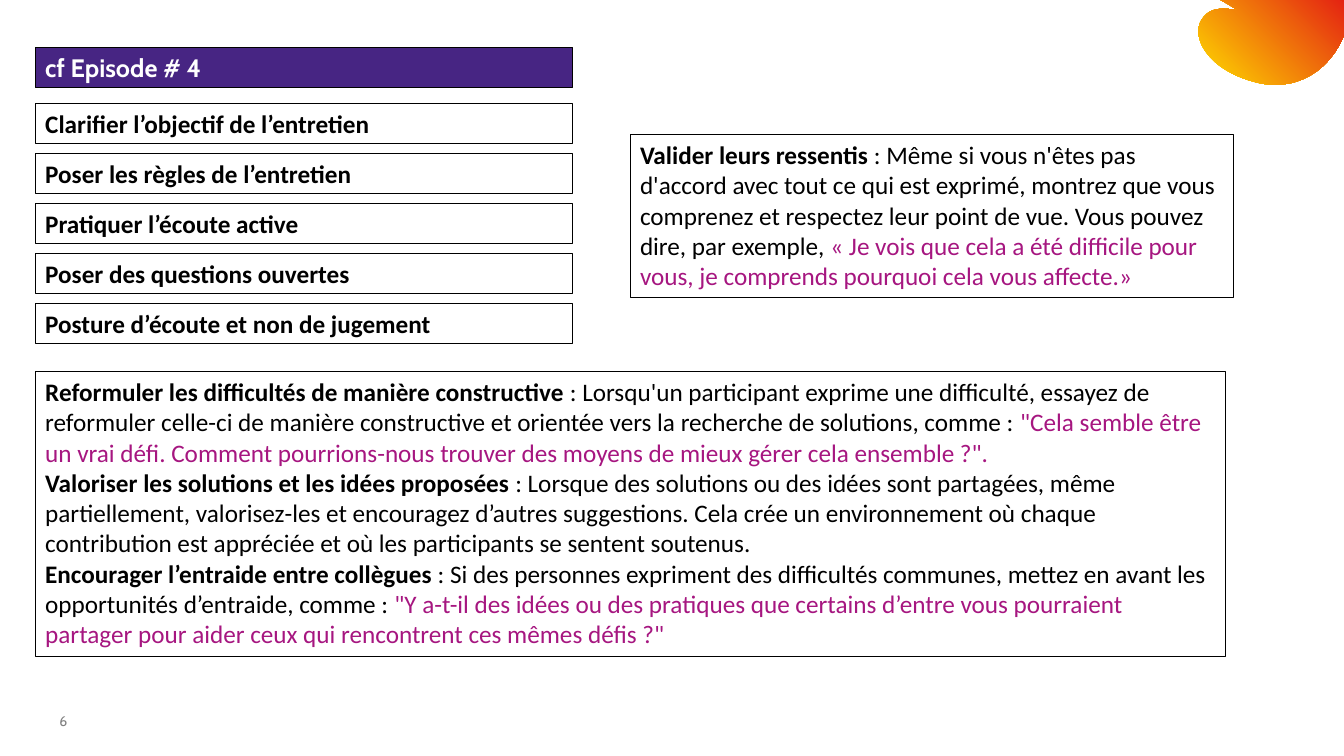
from dataclasses import dataclass

from pptx import Presentation
from pptx.dml.color import RGBColor
from pptx.enum.shapes import MSO_SHAPE
from pptx.enum.text import MSO_ANCHOR, MSO_AUTO_SIZE, PP_ALIGN
from pptx.slide import Slide
from pptx.text.text import TextFrame
from pptx.util import Cm, Pt


@dataclass(frozen=True)
class Theme:
    black: RGBColor = RGBColor(0x00, 0x00, 0x00)
    white: RGBColor = RGBColor(0xFF, 0xFF, 0xFF)
    purple: RGBColor = RGBColor(0x47, 0x25, 0x83)
    magenta: RGBColor = RGBColor(0xA6, 0x16, 0x80)
    grey: RGBColor = RGBColor(0x80, 0x80, 0x80)
    yellow: RGBColor = RGBColor(0xFF, 0xDD, 0x00)
    red: RGBColor = RGBColor(0xE4, 0x23, 0x12)
    body_font: str = "Calibri"
    brand_font: str = "Cabin"
    body_size: Pt = Pt(18)
    number_size: Pt = Pt(10)
    border: Pt = Pt(0.75)


THEME = Theme()


@dataclass(frozen=True)
class Run:
    text: str
    bold: bool = False
    color: RGBColor = THEME.black
    font: str = THEME.body_font
    size: Pt = THEME.body_size


@dataclass(frozen=True)
class Box:
    """A bordered text panel, with its place in centimetres."""
    left: float
    top: float
    width: float
    height: float
    paragraphs: list[list[Run]]
    fill: RGBColor | None = None


Point = tuple[float, float]

LEFT, STEP_WIDTH, STEP_HEIGHT = 0.89, 13.54, 1.02
FIRST_STEP_TOP, STEP_PITCH = 2.6, 1.26

STEPS = [
    "Clarifier l’objectif de l’entretien",
    "Poser les règles de l’entretien",
    "Pratiquer l’écoute active",
    "Poser des questions ouvertes",
    "Posture d’écoute et non de jugement",
]

EPISODE = Box(
    LEFT, 1.19, STEP_WIDTH, STEP_HEIGHT,
    [[Run("cf Episode # 4", True, THEME.white, THEME.brand_font)]],
    THEME.purple,
)

FEELINGS = Box(15.88, 3.39, 15.2, 4.11, [[
    Run("Valider leurs ressentis", True),
    Run(" : Même si vous n'êtes pas d'accord avec tout ce qui est exprimé, "
        "montrez que vous comprenez et respectez leur point de vue. "
        "Vous pouvez dire, par exemple, "),
    Run("« Je vois que cela a été difficile pour vous, "
        "je comprends pourquoi cela vous affecte.»", color=THEME.magenta),
]])

ADVICE = Box(LEFT, 9.36, 30, 7.19, [
    [
        Run("Reformuler les difficultés de manière constructive", True),
        Run(" : Lorsqu'un participant exprime une difficulté, essayez de "
            "reformuler celle-ci de manière constructive et orientée vers "
            "la recherche de solutions, comme : "),
        Run('"Cela semble être un vrai défi. Comment pourrions-nous trouver '
            'des moyens de mieux gérer cela ensemble ?".',
            color=THEME.magenta),
    ],
    [
        Run("Valoriser les solutions et les idées proposées", True),
        Run(" : Lorsque des solutions ou des idées sont partagées, même "
            "partiellement, valorisez-les et encouragez d’autres suggestions. "
            "Cela crée un environnement où chaque contribution est appréciée "
            "et où les participants se sentent soutenus."),
    ],
    [
        Run("Encourager l’entraide entre collègues", True),
        Run(" : Si des personnes expriment des difficultés communes, mettez "
            "en avant les opportunités d’entraide, comme : "),
        Run('"Y a-t-il des idées ou des pratiques que certains d’entre vous '
            'pourraient partager pour aider ceux qui rencontrent ces mêmes '
            'défis ?"', color=THEME.magenta),
    ],
])

PETAL_EDGE: list[Point] = [(30.76, 0), (33.87, 0), (33.87, 0.89), (33.81, 1.02)]
PETAL_CURVES: list[tuple[Point, Point, Point]] = [
    ((33.43, 1.83), (32.59, 2.34), (31.6, 2.06)),
    ((30.35, 1.73), (29.92, 0.79), (30.38, 0.38)),
    ((30.56, 0.2), (30.84, 0.18), (31.29, 0.28)),
    ((31.19, 0.25), (31.09, 0.2), (30.99, 0.13)),
]


def curve_points(start: Point, c1: Point, c2: Point, end: Point,
                 steps: int = 24) -> list[Point]:
    """Sample a cubic Bézier curve, leaving out its start point."""
    points = []
    for i in range(1, steps + 1):
        t = i / steps
        u = 1 - t
        weights = (u ** 3, 3 * u * u * t, 3 * u * t * t, t ** 3)
        ctrl = (start, c1, c2, end)
        points.append((sum(w * x for w, (x, _) in zip(weights, ctrl)),
                       sum(w * y for w, (_, y) in zip(weights, ctrl))))
    return points


def add_petal(slide: Slide) -> None:
    outline = list(PETAL_EDGE)
    for c1, c2, end in PETAL_CURVES:
        outline += curve_points(outline[-1], c1, c2, end)
    first, *rest = [(Cm(x), Cm(y)) for x, y in outline]
    builder = slide.shapes.build_freeform(*first)
    builder.add_line_segments(rest, close=True)
    sp = builder.convert_to_shape()
    sp.shadow.inherit = False
    sp.line.fill.background()
    sp.fill.gradient()
    sp.fill.gradient_angle = 45
    for stop, color in zip(sp.fill.gradient_stops, (THEME.yellow, THEME.red)):
        stop.color.rgb = color


def write_text(tf: TextFrame, paragraphs: list[list[Run]]) -> None:
    for i, runs in enumerate(paragraphs):
        p = tf.add_paragraph() if i else tf.paragraphs[0]
        p.alignment = PP_ALIGN.LEFT
        for run in runs:
            r = p.add_run()
            r.text = run.text
            r.font.color.rgb = run.color
            formats = {"name": run.font, "size": run.size, "bold": run.bold}
            for name, value in formats.items():
                setattr(r.font, name, value)


def add_box(slide: Slide, box: Box) -> None:
    sp = slide.shapes.add_shape(
        MSO_SHAPE.RECTANGLE,
        Cm(box.left), Cm(box.top), Cm(box.width), Cm(box.height))
    sp.shadow.inherit = False
    sp.line.color.rgb = THEME.black
    sp.line.width = THEME.border
    if box.fill is None:
        sp.fill.background()
    else:
        sp.fill.solid()
        sp.fill.fore_color.rgb = box.fill
    formats = {"word_wrap": True, "vertical_anchor": MSO_ANCHOR.TOP,
               "auto_size": MSO_AUTO_SIZE.SHAPE_TO_FIT_TEXT}
    for name, value in formats.items():
        setattr(sp.text_frame, name, value)
    write_text(sp.text_frame, box.paragraphs)


def add_page_number(slide: Slide, number: int) -> None:
    sp = slide.shapes.add_textbox(Cm(1.5), Cm(18.01), Cm(2), Cm(0.36))
    formats = {"word_wrap": True, "vertical_anchor": MSO_ANCHOR.BOTTOM,
               "margin_left": 0, "margin_top": 0,
               "margin_right": 0, "margin_bottom": 0}
    for name, value in formats.items():
        setattr(sp.text_frame, name, value)
    write_text(sp.text_frame, [[Run(str(number), color=THEME.grey,
                                    font=THEME.brand_font,
                                    size=THEME.number_size)]])


def main() -> None:
    prs = Presentation()
    prs.slide_width, prs.slide_height = Cm(33.87), Cm(19.05)
    slide = prs.slides.add_slide(prs.slide_layouts[6])
    add_petal(slide)
    add_page_number(slide, 6)
    steps = [Box(LEFT, FIRST_STEP_TOP + i * STEP_PITCH, STEP_WIDTH,
                 STEP_HEIGHT, [[Run(text, True)]])
             for i, text in enumerate(STEPS)]
    for box in [EPISODE, *steps, FEELINGS, ADVICE]:
        add_box(slide, box)
    prs.save("out.pptx")


if __name__ == "__main__":
    main()
